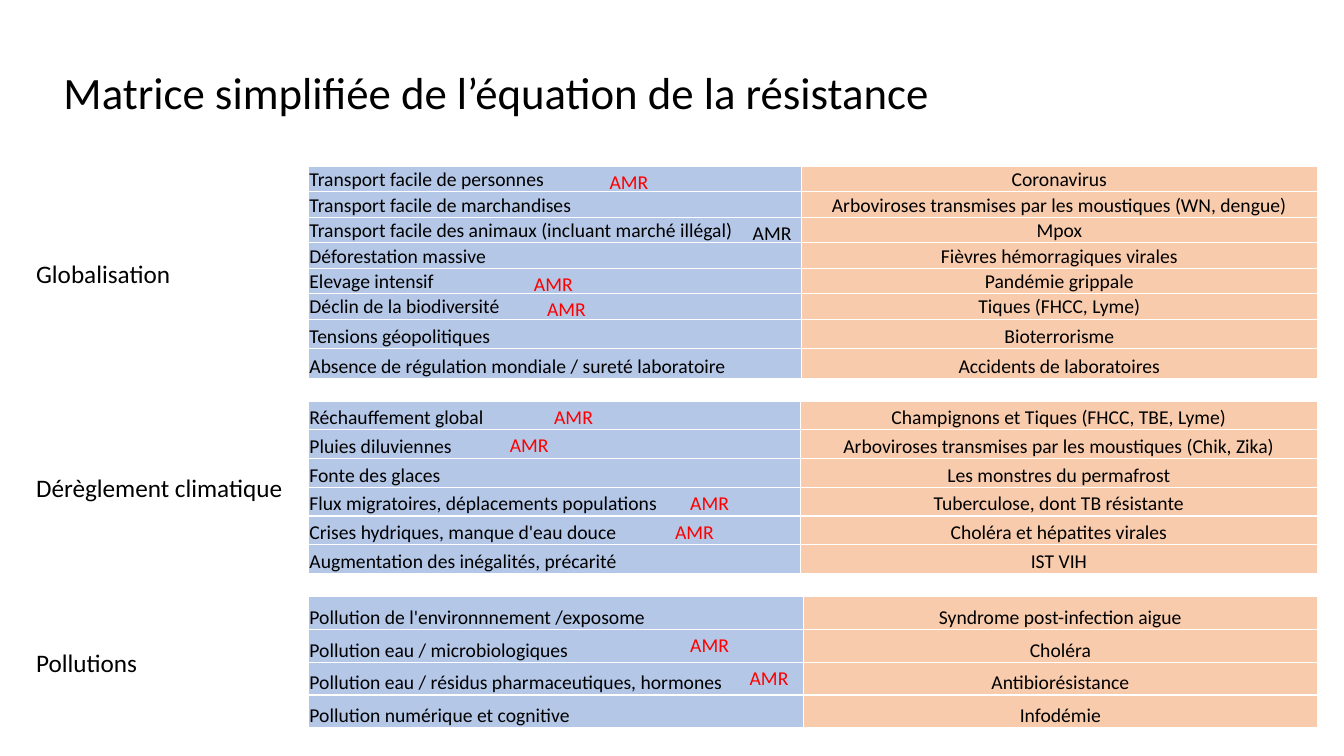
from itertools import accumulate

from lxml.etree import SubElement
from pptx import Presentation
from pptx.dml.color import RGBColor
from pptx.enum.text import MSO_ANCHOR as Anchor, MSO_AUTO_SIZE as AutoSize, PP_ALIGN as Align
from pptx.oxml.ns import qn
from pptx.util import Inches, Pt

BLACK = RGBColor(0x00, 0x00, 0x00)
RED = RGBColor(0xFF, 0x00, 0x00)
WHITE = RGBColor(0xFF, 0xFF, 0xFF)
BLUE = RGBColor(0xB4, 0xC7, 0xE7)
ORANGE = RGBColor(0xF8, 0xCB, 0xAD)

TITLE_ONLY = 5
GRID_COLUMNS, GRID_ROWS = 133.33, 75
TABLE_LEFT, TABLE_WIDTH = 30.6, 100.1
LABEL_LEFT, LABEL_HEIGHT = 2.6, 4
MARKER_WIDTH, MARKER_HEIGHT, MARKER_RISE = 7.4, 3.4, 0.15

# Each row: driver, resulting threat, then the column and colour of its AMR marker
SECTIONS = [
    {"label": "Globalisation", "label_row": 25.1, "label_width": 17.6,
     "top": 16.5, "driver_width": 48.9, "heights": [2.53] * 6 + [2.93, 2.97],
     "rows": [
         ("Transport facile de personnes", "Coronavirus", 58.7, RED),
         ("Transport facile de marchandises",
          "Arboviroses transmises par les moustiques (WN, dengue)"),
         ("Transport facile des animaux (incluant marché illégal)", "Mpox", 72.9, BLACK),
         ("Déforestation massive", "Fièvres hémorragiques virales"),
         ("Elevage intensif", "Pandémie grippale", 51.2, RED),
         ("Déclin de la biodiversité", "Tiques (FHCC, Lyme)", 52.5, RED),
         ("Tensions géopolitiques", "Bioterrorisme"),
         ("Absence de régulation mondiale / sureté laboratoire", "Accidents de laboratoires"),
     ]},
    {"label": "Dérèglement climatique", "label_row": 46.4, "label_width": 27.3,
     "top": 39.8, "driver_width": 48.8, "heights": [2.85] * 6,
     "rows": [
         ("Réchauffement global", "Champignons et Tiques (FHCC, TBE, Lyme)", 53.2, RED),
         ("Pluies diluviennes",
          "Arboviroses transmises par les moustiques (Chik, Zika)", 48.8, RED),
         ("Fonte des glaces", "Les monstres du permafrost"),
         ("Flux migratoires, déplacements populations",
          "Tuberculose, dont TB résistante", 66.7, RED),
         ("Crises hydriques, manque d'eau douce", "Choléra et hépatites virales", 65.2, RED),
         ("Augmentation des inégalités, précarité", "IST VIH"),
     ]},
    {"label": "Pollutions", "label_row": 63.7, "label_width": 17.6,
     "top": 59.2, "driver_width": 49.1, "heights": [3.25] * 4,
     "rows": [
         ("Pollution de l'environnnement /exposome", "Syndrome post-infection aigue"),
         ("Pollution eau / microbiologiques", "Choléra", 66.7, RED),
         ("Pollution eau / résidus pharmaceutiques, hormones", "Antibiorésistance", 72.6, RED),
         ("Pollution numérique et cognitive", "Infodémie"),
     ]},
]


class MatrixSlide:
    """Holds the text style and the slide, measured in grid columns and rows."""

    font_name = "Calibri"

    def __init__(self, presentation):
        self.column = presentation.slide_width / GRID_COLUMNS
        self.row = presentation.slide_height / GRID_ROWS
        self.slide = presentation.slides.add_slide(presentation.slide_layouts[TITLE_ONLY])

    def place(self, left, top, width, height):
        return (round(left * self.column), round(top * self.row),
                round(width * self.column), round(height * self.row))

    def set_text(self, text_frame, text, size, color=BLACK, align=Align.LEFT):
        text_frame.text = text
        paragraph = text_frame.paragraphs[0]
        paragraph.alignment = align
        font = paragraph.runs[0].font
        font.name, font.size = self.font_name, Pt(size)
        font.color.rgb = color

    def title(self, text, left, top, width, height):
        shape = self.slide.shapes.title
        shape.left, shape.top, shape.width, shape.height = self.place(left, top, width, height)
        shape.text_frame.auto_size = AutoSize.NONE
        shape.text_frame.vertical_anchor = Anchor.TOP
        self.set_text(shape.text_frame, text, 32)

    def text(self, text, left, top, width, height, size, **style):
        shape = self.slide.shapes.add_textbox(*self.place(left, top, width, height))
        shape.text_frame.word_wrap = True
        self.set_text(shape.text_frame, text, size, **style)

    def border(self, cell):
        properties = cell._tc.get_or_add_tcPr()
        for side in ("a:lnL", "a:lnR", "a:lnT", "a:lnB"):
            line = SubElement(properties, qn(side), w=str(Pt(1)))
            fill = SubElement(line, qn("a:solidFill"))
            SubElement(fill, qn("a:srgbClr"), val=str(WHITE))

    def cell(self, cell, text, fill, align):
        cell.margin_left = cell.margin_right = cell.margin_top = Inches(0.01)
        cell.margin_bottom = 0
        cell.vertical_anchor = Anchor.BOTTOM
        self.border(cell)
        cell.fill.solid()
        cell.fill.fore_color.rgb = fill
        self.set_text(cell.text_frame, text, 14, align=align)

    def table(self, rows, top, driver_width, heights):
        area = self.place(TABLE_LEFT, top, TABLE_WIDTH, sum(heights))
        table = self.slide.shapes.add_table(len(rows), 2, *area).table
        table.first_row = table.horz_banding = False
        for column, width in zip(table.columns, (driver_width, TABLE_WIDTH - driver_width)):
            column.width = round(width * self.column)
        for index, (driver, threat, *_) in enumerate(rows):
            table.rows[index].height = round(heights[index] * self.row)
            self.cell(table.cell(index, 0), driver, BLUE, Align.LEFT)
            self.cell(table.cell(index, 1), threat, ORANGE, Align.CENTER)

    def markers(self, rows, top, heights):
        row_tops = accumulate(heights, initial=top)
        for (_, _, *marker), row_top in zip(rows, row_tops):
            if marker:
                left, color = marker
                self.text("AMR", left, row_top - MARKER_RISE, MARKER_WIDTH, MARKER_HEIGHT,
                          14, color=color, align=Align.CENTER)


def main():
    presentation = Presentation()
    presentation.slide_width, presentation.slide_height = Inches(13.333), Inches(7.5)
    matrix = MatrixSlide(presentation)

    # Title
    matrix.title("Matrice simplifiée de l’équation de la résistance", 5.3, 5.9, 122.8, 6.4)

    # One label, table and set of AMR markers per section
    for section in SECTIONS:
        rows, top, heights = section["rows"], section["top"], section["heights"]
        matrix.table(rows, top, section["driver_width"], heights)
        matrix.text(section["label"], LABEL_LEFT, section["label_row"],
                    section["label_width"], LABEL_HEIGHT, 18)
        matrix.markers(rows, top, heights)

    presentation.save("out.pptx")


if __name__ == "__main__":
    main()
